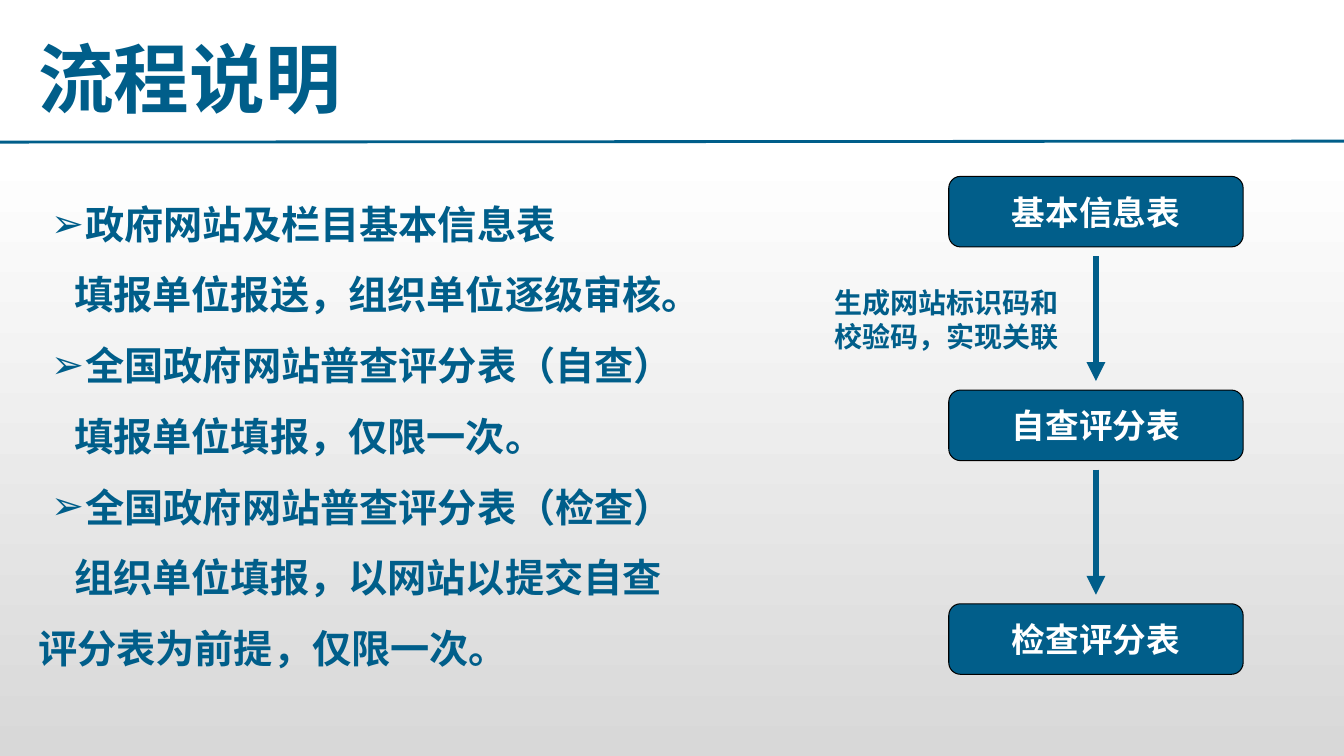
from copy import deepcopy

from pptx import Presentation
from pptx.dml.color import RGBColor
from pptx.enum.shapes import MSO_CONNECTOR as Connector, MSO_SHAPE as Shape
from pptx.enum.text import MSO_ANCHOR as Anchor, PP_ALIGN as Align
from pptx.oxml.ns import qn
from pptx.util import Inches, Pt
from lxml.etree import SubElement

BLUE, BOX_BLUE, WHITE, BLACK = "005E8A", "015E8A", "FFFFFF", "000000"
CJK_FONT, LATIN_FONT = "Noto Sans CJK SC", "Arial"

TITLE = "流程说明"
ITEMS = [  # text, bullet, left indent in inches
    ("政府网站及栏目基本信息表", True, 0.47),
    ("填报单位报送，组织单位逐级审核。", False, 0.36),
    ("全国政府网站普查评分表（自查）", True, 0.47),
    ("填报单位填报，仅限一次。", False, 0.36),
    ("全国政府网站普查评分表（检查）", True, 0.47),
    ("组织单位填报，以网站以提交自查", False, 0.36),
    ("评分表为前提，仅限一次。", False, 0),
]
STEPS = ["基本信息表", "自查评分表", "检查评分表"]
LINK_NOTE = "生成网站标识码和校验码，实现关联"


def color(value):
    return RGBColor.from_string(value)


def set_all(target, values):
    for name, value in values.items():
        setattr(target, name, value)


def write(para, text, size, hue, font=CJK_FONT, **layout):
    set_all(para, layout)
    span = para.add_run()
    span.text = text
    set_all(span.font, {"size": Pt(size), "bold": True, "name": font})
    span.font.color.rgb = color(hue)
    SubElement(span.font._element, qn("a:ea"), typeface=CJK_FONT)


def add_text_frame(page, box, **layout):
    frame = page.shapes.add_textbox(*map(Inches, box)).text_frame
    set_all(frame, {"word_wrap": True, **layout})
    return frame


def add_line(page, start, end, hue, width, arrow=False):
    line = page.shapes.add_connector(Connector.STRAIGHT, *map(Inches, start + end))
    line.line.color.rgb = color(hue)
    line.line.width = Pt(width)
    if arrow:
        SubElement(line.line._get_or_add_ln(), qn("a:tailEnd"), type="triangle")
    SubElement(line._element.spPr, qn("a:effectLst"))


def paint_background(page):
    fill = page.background.fill
    fill.gradient()
    fill.gradient_angle = 270
    stop_list = page.element.find(".//" + qn("a:gsLst"))
    stop_list.append(deepcopy(stop_list[-1]))
    shades = [(0, WHITE), (0.2, WHITE), (1, "D8D8D8")]
    for stop, (position, hue) in zip(fill.gradient_stops, shades):
        stop.position = position
        stop.color.rgb = color(hue)


def add_header(page, box):
    frame = add_text_frame(page, box, vertical_anchor=Anchor.BOTTOM)
    write(frame.paragraphs[0], TITLE, 54, BLUE)
    add_line(page, (0, 1.41), (13.33, 1.4), BLUE, 2)


def add_list(page, box):
    frame = add_text_frame(page, box, margin_top=Inches(0.34))
    for index, (text, bullet, indent) in enumerate(ITEMS):
        para = frame.add_paragraph() if index else frame.paragraphs[0]
        write(para, text, 28, BLUE, line_spacing=Pt(50.5))
        props = para._p.get_or_add_pPr()
        props.set("marL", str(Inches(indent)))
        if bullet:
            props.set("indent", str(Inches(-0.34)))
            SubElement(props, qn("a:buFont"), typeface=LATIN_FONT)
            SubElement(props, qn("a:buChar"), char="➢")


def add_flow(page, box):
    left, top, width, height = box
    step_height, gap = 0.7, 0.09
    pitch = (height - step_height) / (len(STEPS) - 1)
    middle = left + width / 2
    for index, name in enumerate(STEPS):
        step_top = top + index * pitch
        step = page.shapes.add_shape(
            Shape.ROUNDED_RECTANGLE,
            *map(Inches, (left, step_top, width, step_height)))
        step.shadow.inherit = False
        step.fill.solid()
        step.fill.fore_color.rgb = color(BOX_BLUE)
        step.line.color.rgb = color(BLACK)
        step.line.width = Pt(0.75)
        step.text_frame.vertical_anchor = Anchor.MIDDLE
        write(step.text_frame.paragraphs[0], name, 24, WHITE, LATIN_FONT,
              alignment=Align.CENTER)
        # Arrow down from the previous step
        if index:
            start = (middle, step_top - pitch + step_height + gap)
            add_line(page, start, (middle, step_top - gap), BOX_BLUE, 4.5, True)
    # Note beside the first arrow
    frame = add_text_frame(page, (left - 1.23, top + 1.03, 2.44, 0.77))
    write(frame.paragraphs[0], LINK_NOTE, 20, BOX_BLUE, LATIN_FONT,
          line_spacing=Pt(24.3))


def main():
    deck = Presentation()
    set_all(deck, {"slide_width": Inches(13.33), "slide_height": Inches(7.5)})
    page = deck.slides.add_slide(deck.slide_layouts[6])
    paint_background(page)
    add_header(page, (0.28, 0.16, 6.85, 1.11))
    add_list(page, (0.28, 1.41, 9.3, 5.51))
    add_flow(page, (9.41, 1.75, 2.92, 4.94))
    deck.save("out.pptx")


if __name__ == "__main__":
    main()
